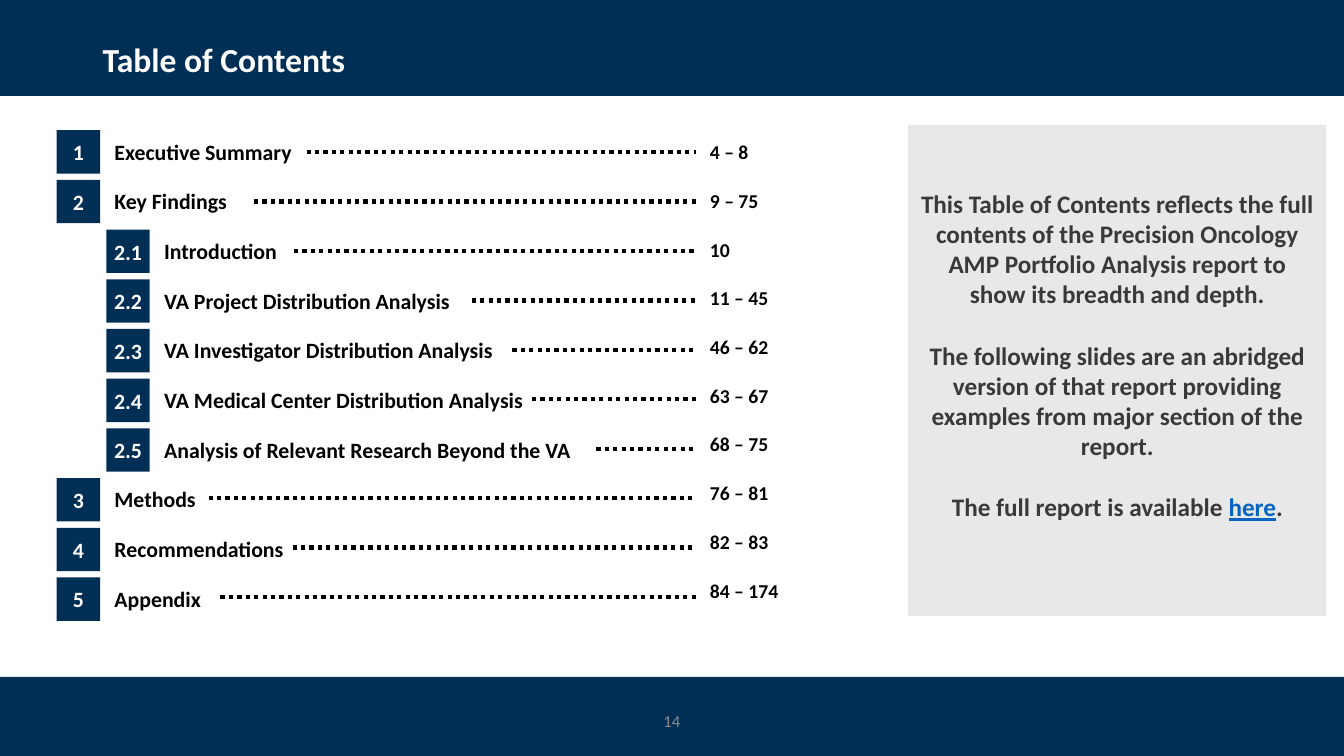
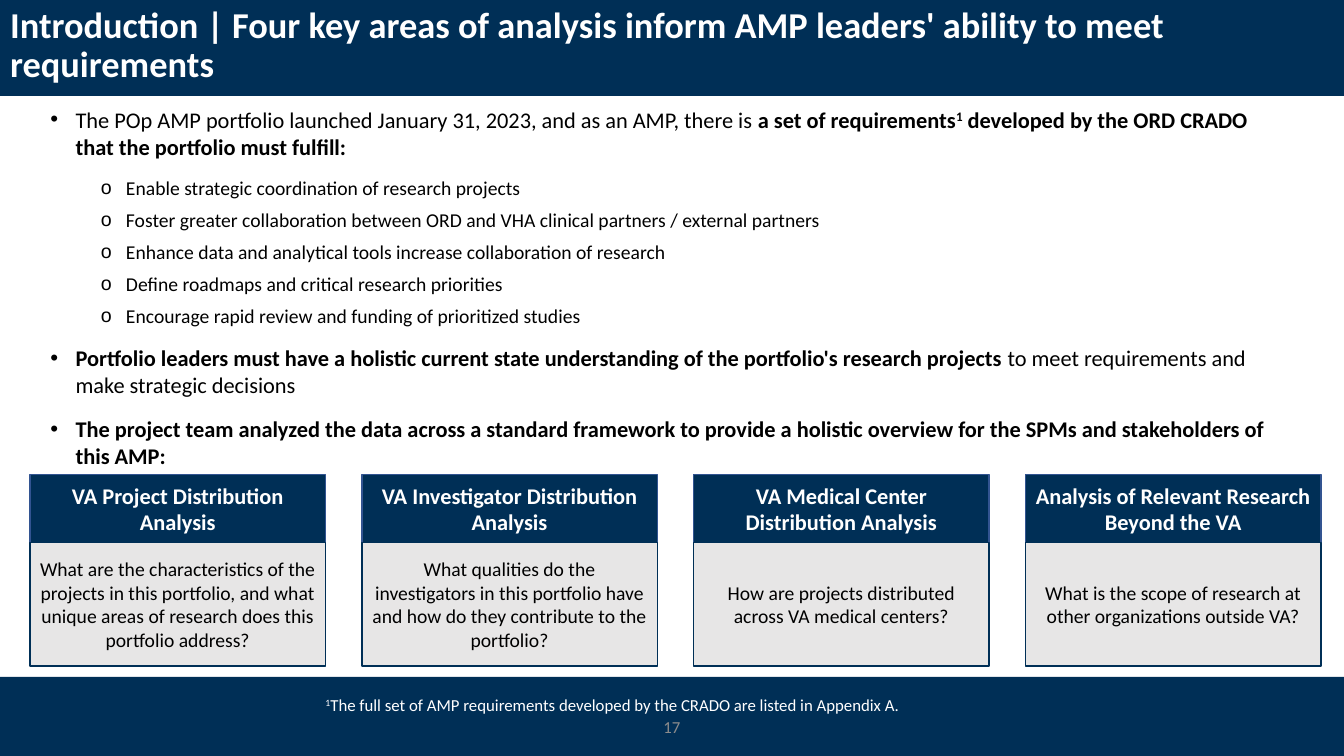
from lxml import etree
from pptx import Presentation
from pptx.dml.color import RGBColor
from pptx.enum.dml import MSO_LINE
from pptx.enum.shapes import MSO_CONNECTOR, MSO_SHAPE
from pptx.enum.text import MSO_ANCHOR as Anchor, MSO_AUTO_SIZE, PP_ALIGN as Align
from pptx.oxml.ns import qn
from pptx.util import Pt

SLIDE_W, SLIDE_H = 960, 540
FONT = "Calibri"
COLORS = {
    "navy": "002F56", "navy_edge": "325491", "white": "FFFFFF",
    "black": "000000", "light": "E7E6E6", "charcoal": "3B3838",
    "link": "0563C1", "number": "8C8C8C",
}
BOLD = {"bold": True}

CONTENTS = [  # number, heading, pages, start of the dotted leader
    ("1", "Executive Summary", "4 – 8", 219),
    ("2", "Key Findings", "9 – 75", 181.5),
    ("2.1", "Introduction", "10", 210),
    ("2.2", "VA Project Distribution Analysis", "11 – 45", 337),
    ("2.3", "VA Investigator Distribution Analysis", "46 – 62", 366),
    ("2.4", "VA Medical Center Distribution Analysis", "63 – 67", 380),
    ("2.5", "Analysis of Relevant Research Beyond the VA", "68 – 75", 426),
    ("3", "Methods", "76 – 81", 149),
    ("4", "Recommendations", "82 – 83", 209),
    ("5", "Appendix", "84 – 174", 157.5),
]
REPORT_NOTE = [
    [("This Table of Contents reflects the full contents of the Precision Oncology "
      "AMP Portfolio Analysis report to show its breadth and depth.", {})],
    [("The following slides are an abridged version of that report providing "
      "examples from major section of the report.", {})],
    [("The full report is available ", {}),
     ("here", {"color": "link", "underline": True}), (".", {})],
]
REQUIREMENTS = [  # level, runs
    (0, [("The POp AMP portfolio launched January 31, 2023, and as an AMP, there is", {}),
         (" a set of requirements", BOLD), ("1", {"bold": True, "superscript": True}),
         (" developed by the ORD CRADO that the portfolio must fulfill:", BOLD)]),
    (1, [("Enable strategic coordination of research projects", {})]),
    (1, [("Foster greater collaboration between ORD and VHA clinical partners / "
          "external partners", {})]),
    (1, [("Enhance data and analytical tools increase collaboration of research", {})]),
    (1, [("Define roadmaps and critical research priorities", {})]),
    (1, [("Encourage rapid review and funding of prioritized studies", {})]),
    (0, [("Portfolio leaders must have a holistic current state understanding of the "
          "portfolio's research projects", BOLD),
         (" to meet requirements and make strategic decisions", {})]),
    (0, [("The project team analyzed the data across a standard framework to provide a "
          "holistic overview for the SPMs and stakeholders of this AMP:", BOLD)]),
]
ANALYSES = [
    ("VA Project Distribution Analysis",
     "What are the characteristics of the projects in this portfolio, and what unique "
     "areas of research does this portfolio address?"),
    ("VA Investigator Distribution Analysis",
     "What qualities do the investigators in this portfolio have and how do they "
     "contribute to the portfolio?"),
    ("VA Medical Center Distribution Analysis",
     "How are projects distributed across VA medical centers?"),
    ("Analysis of Relevant Research Beyond the VA",
     "What is the scope of research at other organizations outside VA?"),
]


def rgb(name):
    return RGBColor.from_string(COLORS[name])


def points(*lengths):
    return [Pt(length) for length in lengths]


def add_runs(paragraph, runs, size, color="black", bold=False):
    for text, style in runs:
        run = paragraph.add_run()
        run.text = text
        font = run.font
        font.name, font.size = FONT, Pt(size)
        font.bold = style.get("bold", bold)
        font.color.rgb = rgb(style.get("color", color))
        if style.get("underline"):
            font.underline = True
        if style.get("superscript"):
            run._r.get_or_add_rPr().set("baseline", "30000")


def set_frame(frame, anchor=Anchor.TOP, wrap=True, insets=None):
    frame.auto_size = MSO_AUTO_SIZE.NONE
    frame.word_wrap = wrap
    frame.vertical_anchor = anchor
    if insets:
        (frame.margin_left, frame.margin_top,
         frame.margin_right, frame.margin_bottom) = points(*insets)


def add_text(slide, box, text_runs, size, color="black", bold=False,
             align=Align.LEFT, **frame_options):
    frame = slide.shapes.add_textbox(*points(*box)).text_frame
    set_frame(frame, **frame_options)
    frame.paragraphs[0].alignment = align
    add_runs(frame.paragraphs[0], text_runs, size, color, bold)


def add_rect(slide, box, fill, edge=None):
    rect = slide.shapes.add_shape(MSO_SHAPE.RECTANGLE, *points(*box))
    rect.shadow.inherit = False
    rect.fill.solid()
    rect.fill.fore_color.rgb = rgb(fill)
    if edge:
        rect.line.color.rgb = rgb(edge)
        rect.line.width = Pt(1)
    else:
        rect.line.fill.background()
    return rect


def add_label_rect(slide, box, text, size, color, fill, edge=None, bold=False,
                   **frame_options):
    frame = add_rect(slide, box, fill, edge).text_frame
    set_frame(frame, anchor=Anchor.MIDDLE, **frame_options)
    frame.paragraphs[0].alignment = Align.CENTER
    add_runs(frame.paragraphs[0], [(text, {})], size, color, bold)


def add_master_bands(master, slide):
    """Build the two bands and move them behind everything on the master."""
    tree = master.element.cSld.spTree
    for index, (top, height) in enumerate([(0, 68.5), (483.5, SLIDE_H - 483.5)]):
        band = add_rect(slide, (0, top, SLIDE_W, height), "navy").element
        band.nvSpPr.cNvPr.set("id", str(100 + index))
        tree.insert(2 + index, band)


def place(placeholder, box):
    (placeholder.left, placeholder.top,
     placeholder.width, placeholder.height) = points(*box)


def set_title(slide, box, text, size):
    title = slide.shapes.title
    place(title, box)
    set_frame(title.text_frame, anchor=Anchor.MIDDLE)
    paragraph = title.text_frame.paragraphs[0]
    paragraph.alignment = Align.LEFT
    paragraph.line_spacing = 0.9
    add_runs(paragraph, [(text, {})], size, "white", True)


def add_slide_number(slide, top, number):
    add_text(slide, (372, top, 216, 28.8), [(number, {})], 12, "number",
             align=Align.CENTER, anchor=Anchor.MIDDLE)


def add_leader(slide, start, end, y):
    leader = slide.shapes.add_connector(
        MSO_CONNECTOR.STRAIGHT, *points(start, y, end, y))
    leader.line.color.rgb = rgb("black")
    leader.line.width = Pt(3)
    leader.line.dash_style = MSO_LINE.ROUND_DOT
    etree.SubElement(leader.element.spPr, qn("a:effectLst"))


def add_contents(slide, left, top):
    step, badge, inset = 35.5, 31, 5.76
    label_right, leader_end, pages_left = left + 353.5, left + 456.5, left + 459.5
    for row, (number, heading, pages, leader_start) in enumerate(CONTENTS):
        y = top + row * step
        x = left + step * number.count(".")
        add_label_rect(slide, (x, y, badge, badge), number, 15.6, "white", "navy",
                       bold=True, wrap=False, insets=[inset] * 4)
        label_left = x + step
        add_text(slide, (label_left, y, label_right - label_left, badge),
                 [(heading, {})], 15.6, bold=True, wrap=False,
                 insets=(inset, inset, 0, inset))
        add_leader(slide, leader_start, leader_end, top + 15.7 + row * 35.3)
        add_text(slide, (pages_left, top + 3.5 + row * 34.8, 68, 24.5),
                 [(pages, {})], 14, bold=True)


def add_report_note(slide, box):
    line = 22
    panel = add_rect(slide, box, "light")
    color = panel.element.spPr.find(qn("a:solidFill"))[0]
    etree.SubElement(color, qn("a:alpha"), val="90000")
    frame = panel.text_frame
    set_frame(frame, anchor=Anchor.MIDDLE, insets=(7.2, 3.6, 7.2, 3.6 + line))
    for index, runs in enumerate(REPORT_NOTE):
        paragraph = frame.add_paragraph() if index else frame.paragraphs[0]
        paragraph.alignment = Align.CENTER
        paragraph.space_before = Pt(line if index else 0)
        add_runs(paragraph, runs, 18, "charcoal", True)


def fill_requirements(body, box):
    place(body, box)
    frame = body.text_frame
    set_frame(frame)
    previous = None
    for level, runs in REQUIREMENTS:
        first = previous is None
        paragraph = frame.paragraphs[0] if first else frame.add_paragraph()
        paragraph.level = level
        properties = paragraph._p.get_or_add_pPr()
        properties.set("marL", str(Pt(18 + 36 * level)))
        properties.set("indent", str(Pt(-18)))
        etree.SubElement(properties, qn("a:buChar"), char="•o"[level])
        within_sublist = level == previous == 1
        paragraph.space_before = Pt(0 if first else 6 if within_sublist else 12)
        add_runs(paragraph, runs, 14 if level else 16)
        previous = level


def add_analysis_cards(slide, left, top):
    width, pitch, head_height, question_height = 211, 237, 48.4, 88.5
    for column, (heading, question) in enumerate(ANALYSES):
        x = left + column * pitch
        add_label_rect(slide, (x, top, width, head_height), heading, 16,
                       "white", "navy", "navy_edge", bold=True)
        add_label_rect(slide, (x, top + head_height, width, question_height),
                       question, 14, "black", "light", "navy")


def build_contents_slide(slide):
    set_title(slide, (66.2, 19.4, 828, 49), "Table of Contents", 24)
    add_slide_number(slide, 500.4, "14")
    add_report_note(slide, (648.7, 89.3, 298.8, 350.6))
    add_contents(slide, 40.5, 93)


def build_introduction_slide(slide):
    set_title(slide, (0, 8.6, 941, 49),
              "Introduction | Four key areas of analysis inform AMP leaders' "
              "ability to meet requirements", 26)
    fill_requirements(slide.placeholders[1], (28.8, 72, 886.3, 201.6))
    add_slide_number(slide, 504.7, "17")
    add_text(slide, (225.4, 492.5, 446.4, 21.6),
             [("1", {"superscript": True}),
              ("The full set of AMP requirements developed by the CRADO are listed "
               "in Appendix A.", {})], 12, "white")
    add_analysis_cards(slide, 21.5, 339)


def main():
    prs = Presentation()
    prs.slide_width, prs.slide_height = points(SLIDE_W, SLIDE_H)
    contents = prs.slides.add_slide(prs.slide_layouts[5])
    introduction = prs.slides.add_slide(prs.slide_layouts[1])
    add_master_bands(prs.slide_master, contents)
    build_contents_slide(contents)
    build_introduction_slide(introduction)
    prs.save("out.pptx")


if __name__ == "__main__":
    main()
